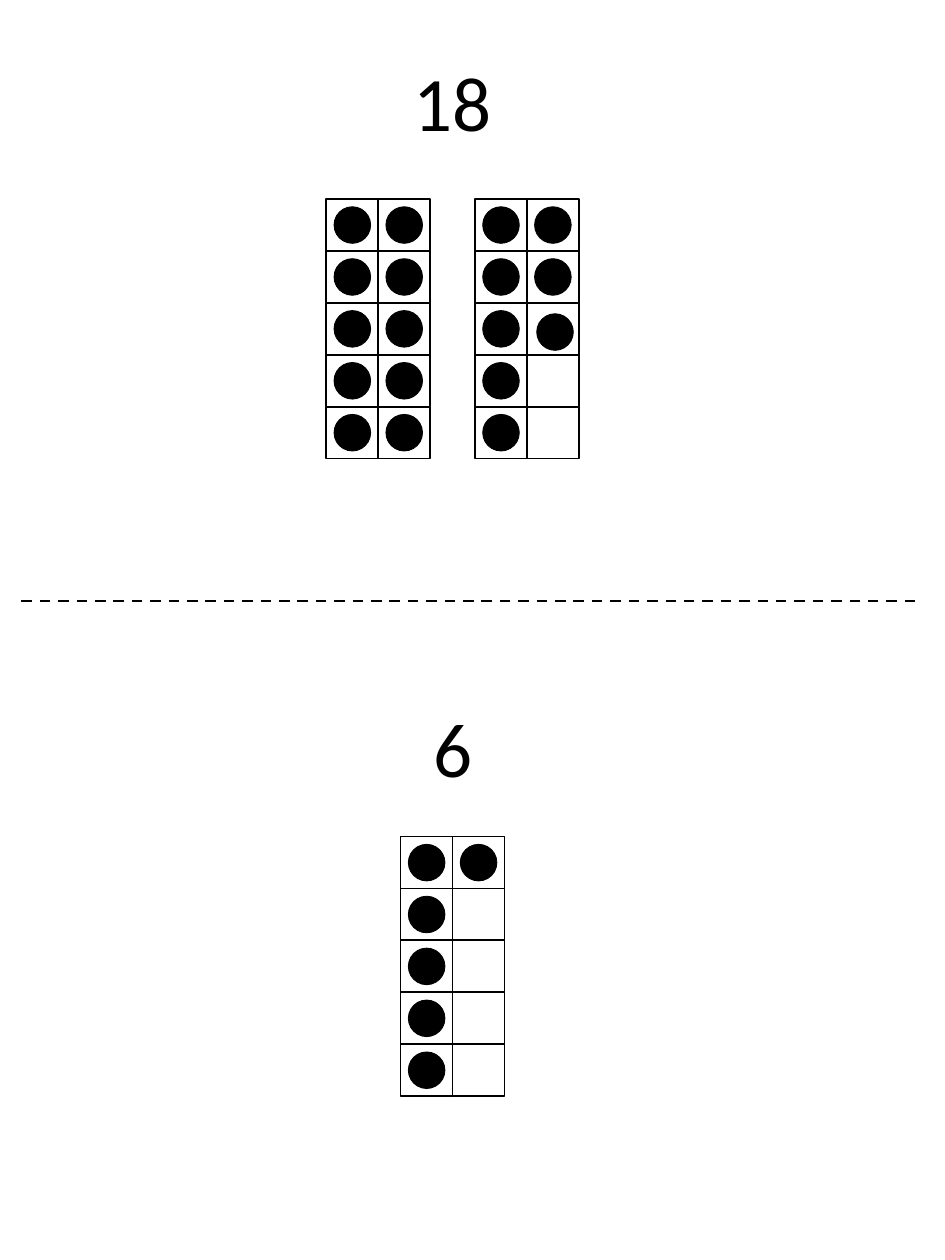
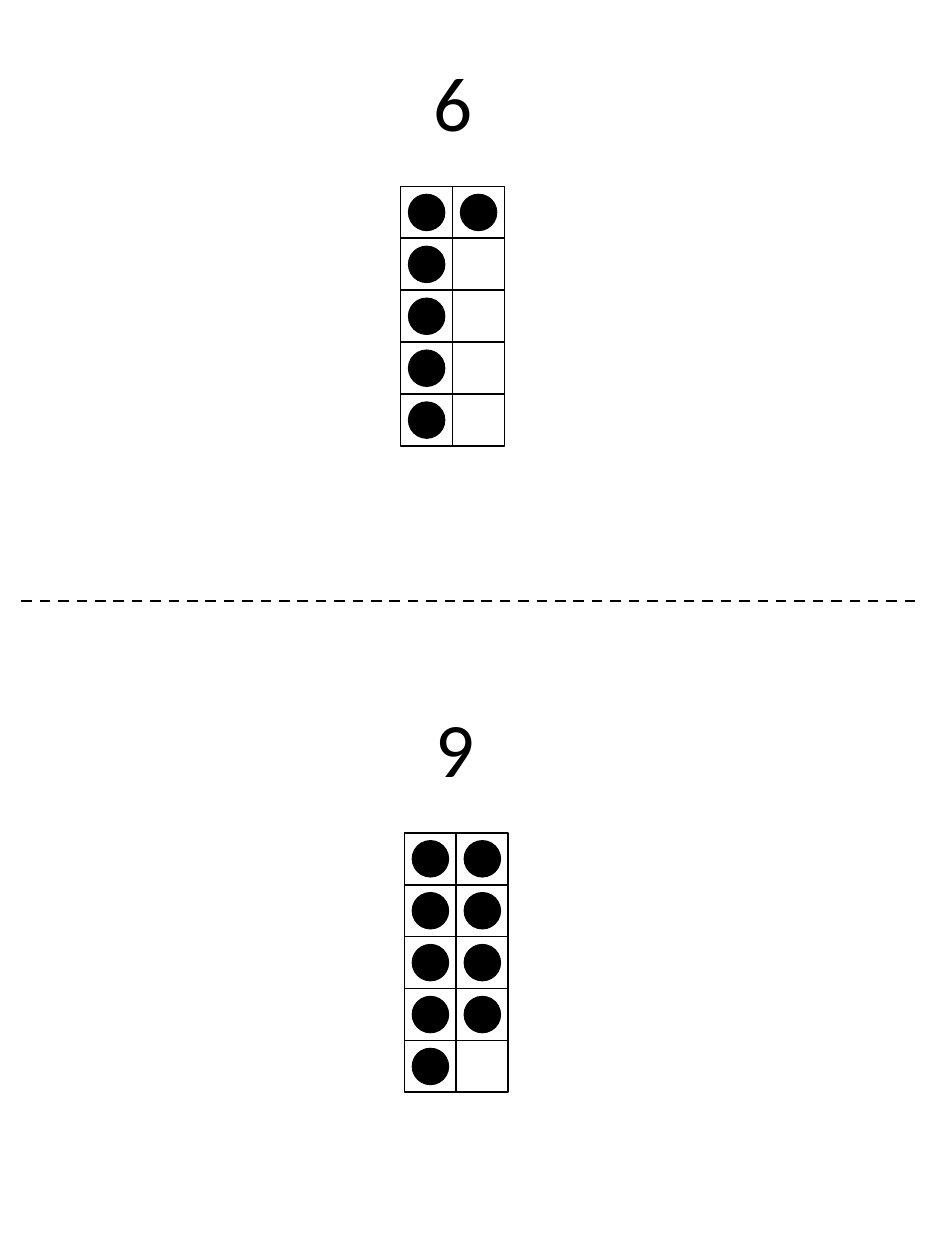
from itertools import product

from lxml.etree import SubElement
from pptx import Presentation
from pptx.dml.color import RGBColor
from pptx.enum.dml import MSO_LINE
from pptx.enum.shapes import MSO_CONNECTOR, MSO_SHAPE
from pptx.enum.text import MSO_ANCHOR, PP_ALIGN
from pptx.oxml.ns import qn
from pptx.util import Inches, Pt

BLACK = RGBColor(0x00, 0x00, 0x00)
WHITE = RGBColor(0xFF, 0xFF, 0xFF)
FONT = "Calibri"

ROWS, COLUMNS = 5, 2
CELL = 2.06 / ROWS
DOT = 0.29
DOT_INSET = (CELL - DOT) / 2
UPPER_TOP, LOWER_TOP = 0.3, 5.43


def add_outlined(shapes, kind, left, top, size, fill, line_width):
    shape = shapes.add_shape(kind, Inches(left), Inches(top), Inches(size), Inches(size))
    shape.shadow.inherit = False
    shape.fill.solid()
    shape.fill.fore_color.rgb = fill
    shape.line.color.rgb = BLACK
    shape.line.width = Pt(line_width)


def add_dot(shapes, left, top):
    add_outlined(shapes, MSO_SHAPE.OVAL, left, top, DOT, BLACK, 0.5)


def add_ten_frame(shapes, left, top, count):
    for row, column in product(range(ROWS), range(COLUMNS)):
        cell_left, cell_top = left + column * CELL, top + row * CELL
        add_outlined(shapes, MSO_SHAPE.RECTANGLE, cell_left, cell_top, CELL, WHITE, 1)
        if column * ROWS + row < count:
            add_dot(shapes, cell_left + DOT_INSET, cell_top + DOT_INSET)


def add_number(page, number, top, left=2.77):
    box = page.shapes.add_textbox(Inches(left), Inches(top), Inches(1.65), Inches(1))
    frame = box.text_frame
    frame.word_wrap = True
    frame.vertical_anchor = MSO_ANCHOR.MIDDLE
    para = frame.paragraphs[0]
    para.text = str(number)
    para.alignment = PP_ALIGN.CENTER
    para.font.name = FONT
    para.font.size = Pt(44)
    para.font.color.rgb = BLACK


def add_cut_line(page):
    line = page.shapes.add_connector(
        MSO_CONNECTOR.STRAIGHT, Inches(0.17), Inches(4.77), Inches(7.29), Inches(4.77)
    )
    line.line.color.rgb = BLACK
    line.line.width = Pt(1.5)
    line.line.dash_style = MSO_LINE.DASH
    SubElement(line._element.spPr, qn("a:effectLst"))


def build_eighteen_and_six(page):
    add_ten_frame(page.shapes, 2.59, 1.58, 10)
    add_ten_frame(page.shapes, 3.77, 1.58, 7)
    add_number(page, 18, UPPER_TOP)
    add_ten_frame(page.shapes.add_group_shape().shapes, 3.18, 6.64, 6)
    add_number(page, 6, LOWER_TOP)
    add_cut_line(page)
    add_dot(page.shapes, 4.26, 2.49)


def build_six_and_nine(page):
    add_cut_line(page)
    add_number(page, 6, UPPER_TOP)
    add_ten_frame(page.shapes, 3.18, 1.48, 6)
    add_number(page, 9, LOWER_TOP, left=2.79)
    add_ten_frame(page.shapes, 3.21, 6.61, 9)


def main():
    deck = Presentation()
    deck.slide_width = Inches(7.5)
    deck.slide_height = Inches(10)
    for build in (build_eighteen_and_six, build_six_and_nine):
        build(deck.slides.add_slide(deck.slide_layouts[6]))
    deck.save("out.pptx")


if __name__ == "__main__":
    main()
